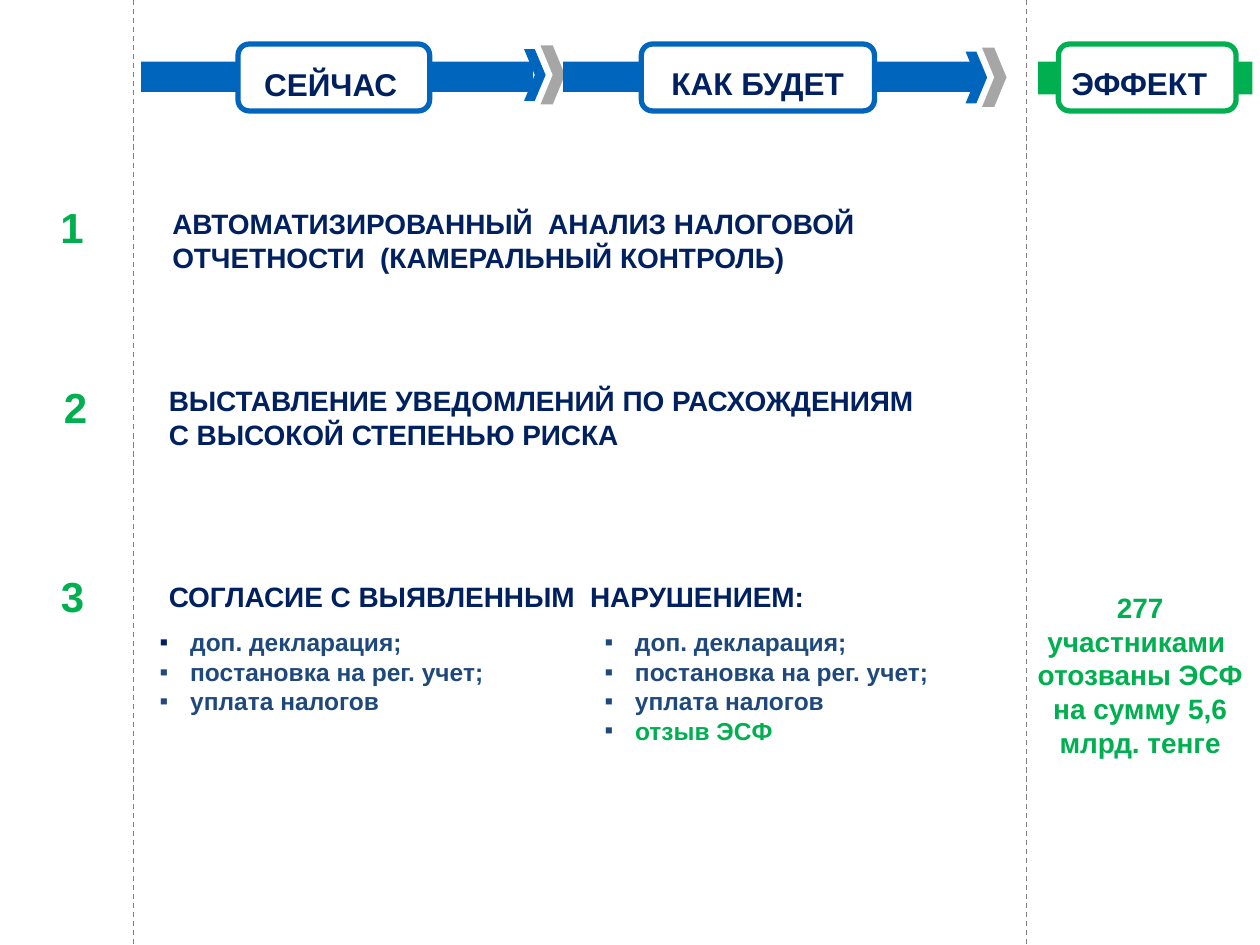
from dataclasses import dataclass

from lxml import etree
from pptx import Presentation
from pptx.dml.color import RGBColor
from pptx.enum import dml, shapes, text
from pptx.oxml import ns
from pptx.util import Pt


@dataclass(frozen=True)
class Theme:
    blue: str = "0065BD"
    navy: str = "002060"
    steel: str = "1F497D"
    green: str = "00B050"
    gray: str = "A6A6A6"
    rule: str = "808080"
    white: str = "FFFFFF"
    font: str = "Arial"
    number: int = 24
    header: int = 18
    heading: int = 16
    item: int = 14


T = Theme()
Box = tuple[float, float, float, float]
BULLET_INDENT = 13.5
HEADING_INDENT = 35.4


@dataclass(frozen=True)
class Run:
    text: str
    color: str
    bold: bool = True


@dataclass(frozen=True)
class Label:
    box: Box
    paragraphs: list[list[Run]]
    size: int
    centered: bool = False
    indent: float = 0
    spacing: float = 1.0
    bullet: str = ""
    grow: bool = True


@dataclass(frozen=True)
class Header:
    title: str
    color: str
    bar: Box
    frame: Box
    caption: Box


def set_all(target, values: dict) -> None:
    for name, value in values.items():
        setattr(target, name, value)


def paint(sp, fill: str, line: str = "") -> None:
    sp.shadow.inherit = False
    sp.fill.solid()
    sp.fill.fore_color.rgb = RGBColor.from_string(fill)
    if line:
        sp.line.color.rgb = RGBColor.from_string(line)
        sp.line.width = Pt(3)
    else:
        sp.line.fill.background()


def add_block(s, kind, box: Box, fill: str, line: str = "") -> None:
    paint(s.shapes.add_shape(kind, *map(Pt, box)), fill, line)


def add_divider(s, x: float) -> None:
    c = s.shapes.add_connector(shapes.MSO_CONNECTOR.STRAIGHT, Pt(x), Pt(0), Pt(x), Pt(543.6))
    c.line.color.rgb = RGBColor.from_string(T.rule)
    set_all(c.line, {"width": Pt(0.75), "dash_style": dml.MSO_LINE.DASH})
    etree.SubElement(c._element.spPr, ns.qn("a:effectLst"))


def add_chevron(s, box: Box, fill: str) -> None:
    x, y, w, h = box
    mid_x, mid_y = x + w / 2, y + h / 2
    points = [(mid_x, y + h), (x + w, mid_y), (mid_x, y), (x, y), (mid_x, mid_y)]
    fb = s.shapes.build_freeform(Pt(x), Pt(y + h))
    fb.add_line_segments([(Pt(px), Pt(py)) for px, py in points], close=True)
    paint(fb.convert_to_shape(), fill)


def add_chevron_pair(s, x: float, y: float) -> None:
    add_chevron(s, (x, y, 12.3, 29.5), T.blue)
    add_chevron(s, (x + 9.4, y - 2.2, 14, 33.8), T.gray)


def add_label(s, label: Label) -> None:
    tf = s.shapes.add_textbox(*map(Pt, label.box)).text_frame
    fit = text.MSO_AUTO_SIZE
    set_all(tf, {"word_wrap": True,
                 "auto_size": fit.SHAPE_TO_FIT_TEXT if label.grow else fit.NONE})
    for i, runs in enumerate(label.paragraphs):
        p = tf.add_paragraph() if i else tf.paragraphs[0]
        align = text.PP_ALIGN.CENTER if label.centered else text.PP_ALIGN.LEFT
        set_all(p, {"alignment": align, "line_spacing": label.spacing})
        pPr = p._p.get_or_add_pPr()
        pPr.set("marL", str(Pt(label.indent)))
        pPr.set("indent", str(Pt(-label.indent if label.bullet else 0)))
        if label.bullet:
            etree.SubElement(pPr, ns.qn("a:buFont")).set("typeface", T.font)
            etree.SubElement(pPr, ns.qn("a:buChar")).set("char", label.bullet)
        for run in runs:
            r = p.add_run()
            r.text = run.text
            set_all(r.font, {"name": T.font, "size": Pt(label.size), "bold": run.bold})
            r.font.color.rgb = RGBColor.from_string(run.color)


def add_header(s, h: Header) -> None:
    add_block(s, shapes.MSO_SHAPE.ROUNDED_RECTANGLE, h.frame, T.white, h.color)
    add_label(s, Label(h.caption, [[Run(h.title, T.navy)]], T.header,
                       centered=True, indent=BULLET_INDENT, spacing=1.5))


def heading(box: Box, *lines: str, indent: float = HEADING_INDENT) -> Label:
    return Label(box, [[Run(line, T.navy)] for line in lines], T.heading, indent=indent)


def bullets(box: Box, paragraphs: list[list[Run]]) -> Label:
    return Label(box, paragraphs, T.item, indent=BULLET_INDENT, bullet="▪", grow=False)


def number(value: str, x: float, y: float, w: float, centered: bool = True) -> Label:
    return Label((x, y, w, 36), [[Run(value, T.green)]], T.number, centered)


HEADERS = [
    Header("СЕЙЧАС", T.blue, (80.6, 35.3, 223.9, 17.3),
           (136, 25.2, 109.5, 38.2), (125.3, 23, 113.8, 36)),
    Header("КАК БУДЕТ", T.blue, (321.8, 35.3, 236.2, 17.3),
           (366.5, 25.2, 133.2, 38.2), (338.4, 22.3, 175.7, 40.3)),
    Header("ЭФФЕКТ", T.green, (593.3, 35.3, 122.4, 18.7),
           (604.8, 25.2, 101.5, 38.2), (582.5, 22.3, 123.8, 40.3)),
]

DECLARATION = "доп. декларация;"
COMMON_ITEMS = [[Run(f" {item}", T.steel)]
                for item in ("постановка на рег. учет;", "уплата налогов")]

LABELS = [
    # Step numbers
    number("1", 27.4, 111.6, 32.4, centered=False),
    number("2", 29.5, 214.6, 24.5),
    number("3", 25.2, 322.6, 32.4),
    # Step headings
    heading((91.4, 114.5, 624.2, 46), "АВТОМАТИЗИРОВАННЫЙ  АНАЛИЗ НАЛОГОВОЙ",
            "ОТЧЕТНОСТИ  (КАМЕРАЛЬНЫЙ КОНТРОЛЬ)", indent=0),
    heading((54, 215.6, 528.5, 46), "ВЫСТАВЛЕНИЕ УВЕДОМЛЕНИЙ ПО РАСХОЖДЕНИЯМ",
            "С ВЫСОКОЙ СТЕПЕНЬЮ РИСКА"),
    heading((54, 327.6, 487.4, 26.6), "СОГЛАСИЕ С ВЫЯВЛЕННЫМ  НАРУШЕНИЕМ:"),
    # Actions now and later
    bullets((84.2, 355, 245.5, 70.6),
            [[Run(" ", T.navy, False), Run(DECLARATION, T.steel)], *COMMON_ITEMS]),
    bullets((338.4, 355, 257, 90.7),
            [[Run(f" {DECLARATION}", T.steel)], *COMMON_ITEMS,
             [Run(" ", T.steel), Run("отзыв ЭСФ", T.green)]]),
    # Effect
    Label((584.6, 334, 133.9, 104.4),
          [[Run("277 участниками  отозваны ЭСФ на сумму 5,6 млрд. тенге", T.green)]],
          T.heading, centered=True),
]


def main() -> None:
    prs = Presentation()
    set_all(prs, {"slide_width": Pt(720), "slide_height": Pt(540)})
    s = prs.slides.add_slide(prs.slide_layouts[6])

    # Column dividers
    for x in (76.3, 586.8):
        add_divider(s, x)

    # Header band: first arrow lies under the bars, second above them
    add_chevron_pair(s, 299.5, 28.1)
    for h in HEADERS:
        add_block(s, shapes.MSO_SHAPE.RECTANGLE, h.bar, h.color)
    for h in HEADERS:
        add_header(s, h)
    add_chevron_pair(s, 551.8, 29.5)

    # Steps and effect
    for label in LABELS:
        add_label(s, label)

    prs.save("out.pptx")


if __name__ == "__main__":
    main()
